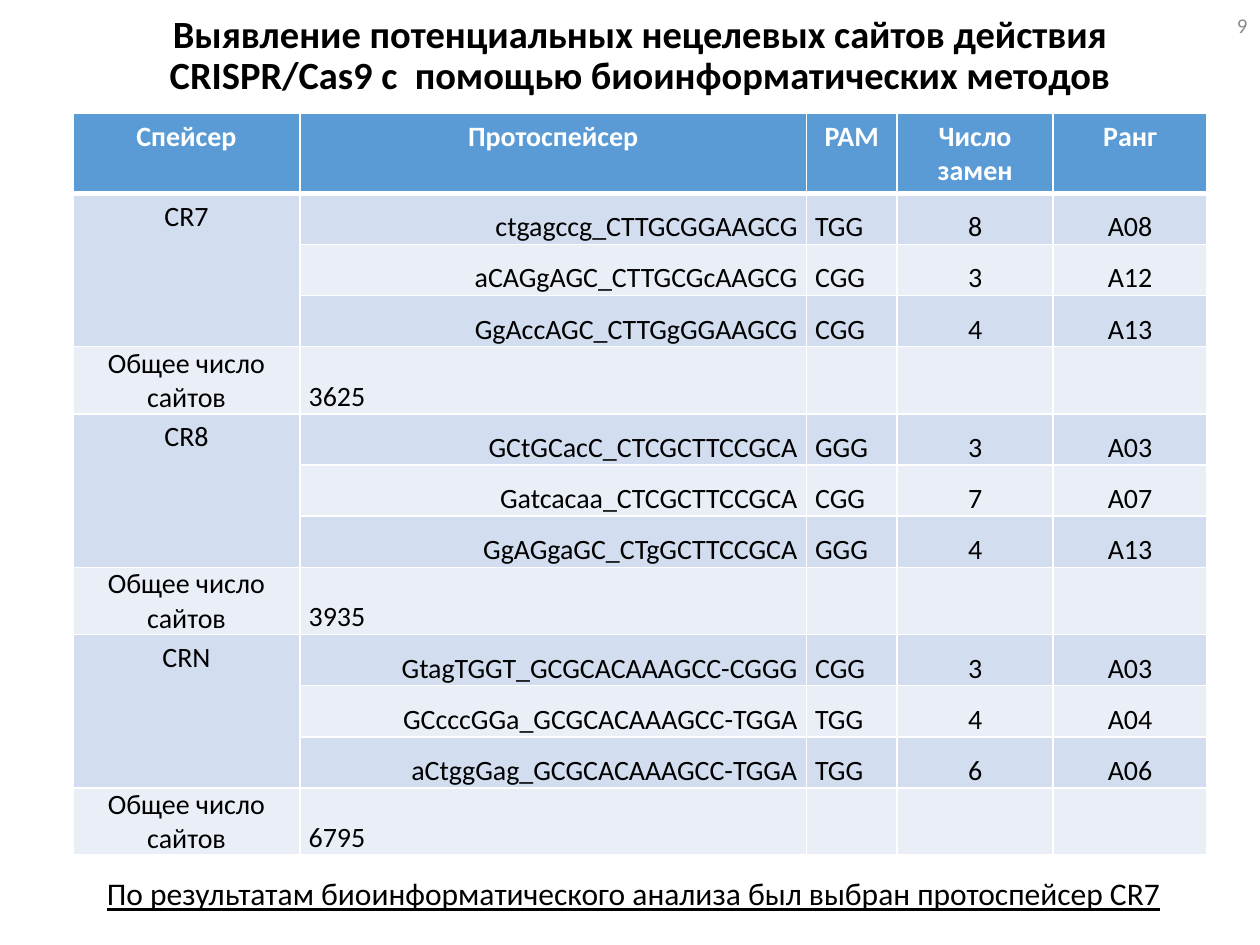
import dataclasses

import lxml.etree
import pptx
import pptx.dml.color
import pptx.enum.text
import pptx.oxml.ns
import pptx.util

ALIGN = pptx.enum.text.PP_ALIGN
ANCHOR = pptx.enum.text.MSO_ANCHOR


@dataclasses.dataclass(frozen=True)
class Theme:
    font: str = "Calibri"
    ink: str = "000000"
    white: str = "FFFFFF"
    muted: str = "8C8C8C"
    header: str = "5B9BD5"
    bands: tuple = ("D2DEEF", "EAEFF7")
    title_size: int = 22
    note_size: int = 18
    table_size: int = 16
    number_size: int = 12
    thin: int = 1
    thick: int = 3


@dataclasses.dataclass(frozen=True)
class Box:
    left: int
    top: int
    width: int
    height: int

    def share(self, left, top, width, height):
        """Return an inner box given in percent of this one."""
        return Box(
            self.left + round(self.width * left / 100),
            self.top + round(self.height * top / 100),
            round(self.width * width / 100),
            round(self.height * height / 100),
        )


THEME = Theme()
HEADERS = ("Спейсер", "Протоспейсер", "PAM", "Число замен", "Ранг")
COLUMN_WEIGHTS = (180, 402, 72, 124, 122)
COLUMN_ALIGN = (ALIGN.CENTER, ALIGN.RIGHT, ALIGN.LEFT, ALIGN.CENTER, ALIGN.CENTER)
TOTAL_LABEL = "Общее число сайтов"
SPACERS = (
    ("CR7", "3625", (
        ("ctgagccg_CTTGCGGAAGCG", "TGG", "8", "A08"),
        ("aCAGgAGC_CTTGCGcAAGCG", "CGG", "3", "A12"),
        ("GgAccAGC_CTTGgGGAAGCG", "CGG", "4", "A13"),
    )),
    ("CR8", "3935", (
        ("GCtGCacC_CTCGCTTCCGCA", "GGG", "3", "A03"),
        ("Gatcacaa_CTCGCTTCCGCA", "CGG", "7", "A07"),
        ("GgAGgaGC_CTgGCTTCCGCA", "GGG", "4", "A13"),
    )),
    ("CRN", "6795", (
        ("GtagTGGT_GCGCACAAAGCC-CGGG", "CGG", "3", "A03"),
        ("GCcccGGa_GCGCACAAAGCC-TGGA", "TGG", "4", "A04"),
        ("aCtggGag_GCGCACAAAGCC-TGGA", "TGG", "6", "A06"),
    )),
)


def rgb(value):
    return pptx.dml.color.RGBColor.from_string(value)


def write(tf, text, size, color=THEME.ink, bold=False, underline=False,
          align=ALIGN.LEFT, line_spacing=None):
    p = tf.paragraphs[0]
    p.alignment = align
    p.line_spacing = line_spacing
    # An empty cell keeps its type size through the paragraph end mark.
    if text:
        r = p.add_run()
        r.text = text
        font = r.font
    else:
        end = lxml.etree.SubElement(p._p, pptx.oxml.ns.qn("a:endParaRPr"))
        end.set("sz", str(size * 100))
        return
    font.name = THEME.font
    font.size = pptx.util.Pt(size)
    font.color.rgb = rgb(color)
    font.bold = bold
    font.underline = underline


def add_text(slide, box, text, size, anchor=ANCHOR.TOP, wrap=True, **fmt):
    s = slide.shapes.add_textbox(box.left, box.top, box.width, box.height)
    tf = s.text_frame
    tf.word_wrap = wrap
    tf.vertical_anchor = anchor
    write(tf, text, size, **fmt)


def border(cell, **widths):
    """Draw white cell borders; widths in points by side: L, R, T, B."""
    qn = pptx.oxml.ns.qn
    tc_pr = cell._tc.get_or_add_tcPr()
    for side in "LRTB":
        width = pptx.util.Pt(widths.get(side, THEME.thin))
        ln = lxml.etree.SubElement(tc_pr, qn(f"a:ln{side}"), w=str(int(width)))
        fill = lxml.etree.SubElement(ln, qn("a:solidFill"))
        lxml.etree.SubElement(fill, qn("a:srgbClr"), val=THEME.white)


def paint(cell, color, **widths):
    border(cell, **widths)
    cell.fill.solid()
    cell.fill.fore_color.rgb = rgb(color)


def fill_cell(cell, text, align, anchor=ANCHOR.TOP, tight=True, **fmt):
    cell.vertical_anchor = anchor
    if tight:
        cell.margin_left = cell.margin_right = pptx.util.Inches(0.07)
        cell.margin_top = cell.margin_bottom = 0
    write(cell.text_frame, text, THEME.table_size, align=align, **fmt)


def site_rows():
    """Yield (first cell, other cells, is total) for each body row."""
    for name, total, sites in SPACERS:
        for i, site in enumerate(sites):
            yield name if i == 0 else "", site, False
        yield TOTAL_LABEL, (total, "", "", ""), True


def add_sites_table(slide, box):
    rows = list(site_rows())
    table = slide.shapes.add_table(len(rows) + 1, len(HEADERS), box.left, box.top,
                                   box.width, box.height).table
    for column, weight in zip(table.columns, COLUMN_WEIGHTS):
        column.width = round(box.width * weight / sum(COLUMN_WEIGHTS))
    for c, header in enumerate(HEADERS):
        cell = table.cell(0, c)
        paint(cell, THEME.header, B=THEME.thick)
        fill_cell(cell, header, ALIGN.CENTER, tight=False, color=THEME.white, bold=True)

    for r, (label, values, is_total) in enumerate(rows, start=1):
        top = THEME.thick if r == 1 else THEME.thin
        for c, text in enumerate((label, *values)):
            cell = table.cell(r, c)
            paint(cell, THEME.bands[(r - 1) % 2], T=top)
            align = ALIGN.LEFT if is_total and c == 1 else COLUMN_ALIGN[c]
            fill_cell(cell, text, align, ANCHOR.BOTTOM if c else ANCHOR.TOP,
                      tight=is_total or c > 0)

    first = 1
    for _, _, sites in SPACERS:
        table.cell(first, 0).merge(table.cell(first + len(sites) - 1, 0))
        first += len(sites) + 1


def add_title(slide, box):
    add_text(slide, box,
             "Выявление потенциальных нецелевых сайтов действия "
             "CRISPR/Cas9 с  помощью биоинформатических методов",
             THEME.title_size, ANCHOR.MIDDLE, bold=True, align=ALIGN.CENTER,
             line_spacing=0.9)


def add_conclusion(slide, box):
    add_text(slide, box,
             "По результатам биоинформатического анализа был выбран протоспейсер CR7",
             THEME.note_size, wrap=False, underline=True)


def add_page_number(slide, box):
    add_text(slide, box, "9", THEME.number_size, ANCHOR.MIDDLE,
             color=THEME.muted, align=ALIGN.RIGHT)


def main():
    prs = pptx.Presentation()
    prs.slide_width = pptx.util.Inches(10)
    prs.slide_height = pptx.util.Inches(7.5)
    slide = prs.slides.add_slide(prs.slide_layouts[6])
    page = Box(0, 0, prs.slide_width, prs.slide_height)
    add_title(slide, page.share(7.7, 0, 86.2, 12))
    add_sites_table(slide, page.share(5.8, 12, 90, 70.4))
    add_conclusion(slide, page.share(7.5, 91.87, 86.6, 5.33))
    add_page_number(slide, page.share(77.5, 0, 22.5, 5.33))
    prs.save("out.pptx")


if __name__ == "__main__":
    main()
